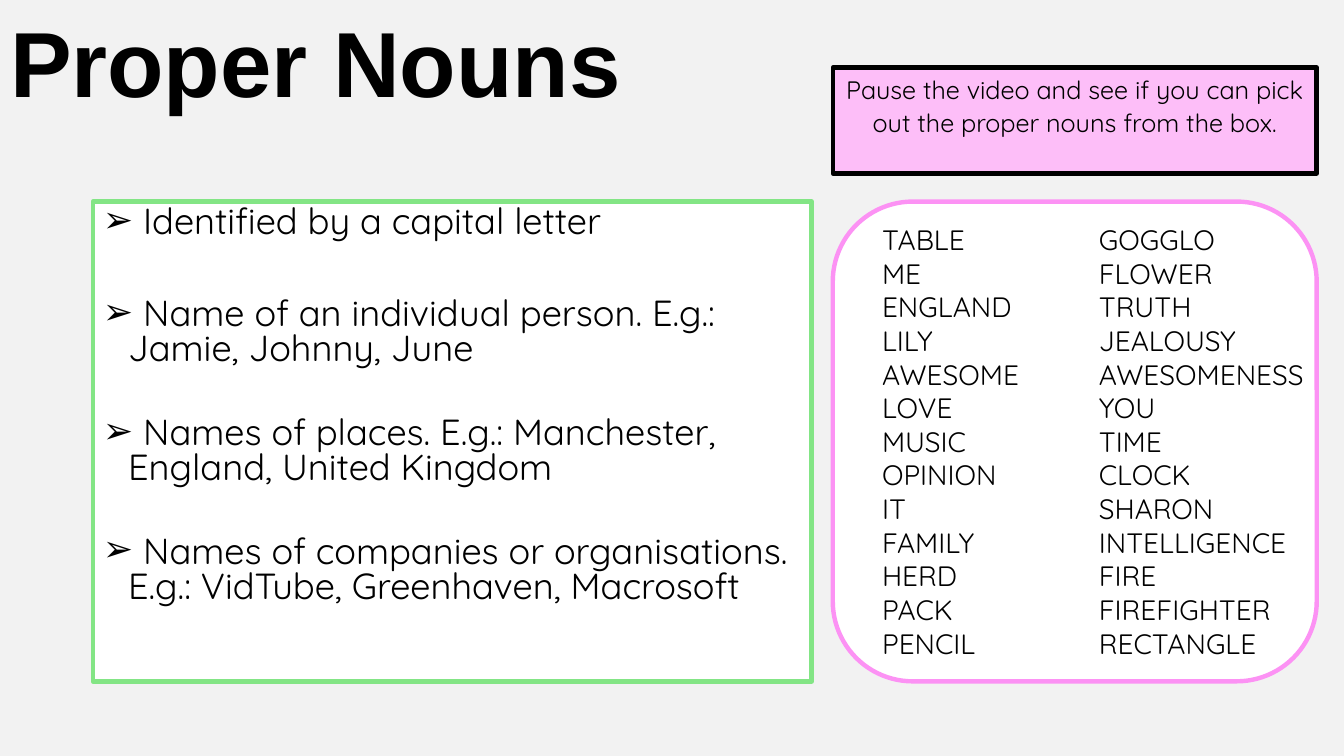
from lxml.etree import SubElement
from pptx import Presentation
from pptx.dml.color import RGBColor
from pptx.enum.shapes import MSO_SHAPE as Shape
from pptx.enum.text import MSO_ANCHOR as Anchor, MSO_AUTO_SIZE as AutoSize, PP_ALIGN as Align
from pptx.oxml.ns import qn
from pptx.util import Inches, Pt

BLACK = RGBColor(0x00, 0x00, 0x00)
WHITE = RGBColor(0xFF, 0xFF, 0xFF)
PAPER = RGBColor(0xF2, 0xF2, 0xF2)
GREEN = RGBColor(0x83, 0xE5, 0x85)
PINK = RGBColor(0xFC, 0x92, 0xF4)
PALE_PINK = RGBColor(0xFD, 0xBE, 0xF8)
BODY_FONT = "Quicksand"

RULES = [
    "Identified by a capital letter",
    "Name of an individual person. E.g.: Jamie, Johnny, June",
    "Names of places. E.g.: Manchester, England, United Kingdom",
    "Names of companies or organisations. E.g.: VidTube, Greenhaven, Macrosoft",
]
WORD_COLUMNS = [
    ["TABLE", "ME", "ENGLAND", "LILY", "AWESOME", "LOVE", "MUSIC", "OPINION",
     "IT", "FAMILY", "HERD", "PACK", "PENCIL"],
    ["GOGGLO", "FLOWER", "TRUTH", "JEALOUSY", "AWESOMENESS", "YOU", "TIME",
     "CLOCK", "SHARON", "INTELLIGENCE", "FIRE", "FIREFIGHTER", "RECTANGLE"],
]


def place(shape, box):
    shape.left, shape.top, shape.width, shape.height = (Inches(v) for v in box)


def outline(shape, fill, line):
    shape.fill.solid()
    shape.fill.fore_color.rgb = fill
    shape.line.color.rgb = line
    shape.line.width = Pt(3.15)


def add_run(paragraph, text, size, font=BODY_FONT, bold=False):
    run = paragraph.add_run()
    run.text = text
    run.font.name = font
    run.font.size = Pt(size)
    run.font.bold = bold
    run.font.color.rgb = BLACK


def paragraphs(frame, count):
    """Yield the first paragraph of the frame, then new ones."""
    for index in range(count):
        yield frame.add_paragraph() if index else frame.paragraphs[0]


def set_bullet(paragraph, char, indent):
    properties = paragraph._p.get_or_add_pPr()
    properties.set("marL", str(Inches(indent)))
    properties.set("indent", str(-Inches(indent)))
    SubElement(properties, qn("a:buFont"), typeface="Arial")
    SubElement(properties, qn("a:buChar"), char=char)


def add_heading(slide, box):
    title = slide.shapes.title
    place(title, box)
    frame = title.text_frame
    frame.auto_size = AutoSize.NONE
    frame.vertical_anchor = Anchor.MIDDLE
    heading = frame.paragraphs[0]
    heading.alignment = Align.LEFT
    heading.line_spacing = 0.9
    add_run(heading, "Proper Nouns", 66, "Arial", True)


def add_rules(slide, box):
    body = slide.placeholders[1]
    place(body, box)
    outline(body, WHITE, GREEN)
    frame = body.text_frame
    frame.auto_size = AutoSize.NONE
    for rule, paragraph in zip(RULES, paragraphs(frame, len(RULES))):
        paragraph.line_spacing = 0.8
        paragraph.space_before = Pt(10)
        paragraph.space_after = Pt(31 if rule == RULES[0] else 25)
        set_bullet(paragraph, "➢", 0.25)
        add_run(paragraph, " " + rule, 25.9)


def add_panel(slide, kind, box, fill, line):
    panel = slide.shapes.add_shape(kind, *(Inches(v) for v in box))
    panel.shadow.inherit = False
    outline(panel, fill, line)
    return panel


def add_word_box(slide, box):
    left, top, width, height = box
    add_panel(slide, Shape.ROUNDED_RECTANGLE, box, WHITE, PINK)
    column_width = 2.15
    for number, words in enumerate(WORD_COLUMNS):
        column = slide.shapes.add_textbox(
            Inches(left + 0.39 + number * column_width), Inches(top + 0.16),
            Inches(column_width + 0.1), Inches(height - 0.32))
        frame = column.text_frame
        frame.word_wrap = True
        for word, paragraph in zip(words, paragraphs(frame, len(words))):
            add_run(paragraph, word, 20)


def add_task(slide, box):
    frame = add_panel(slide, Shape.RECTANGLE, box, PALE_PINK, BLACK).text_frame
    frame.word_wrap = True
    frame.vertical_anchor = Anchor.TOP
    task = frame.paragraphs[0]
    task.alignment = Align.CENTER
    task.line_spacing = 1.07
    task.space_after = Pt(8)
    add_run(task, "Pause the video and see if you can pick out the proper nouns from the box.", 18)


def main():
    deck = Presentation()
    deck.slide_width, deck.slide_height = Inches(13.33), Inches(7.5)
    slide = deck.slides.add_slide(deck.slide_layouts[1])
    slide.background.fill.solid()
    slide.background.fill.fore_color.rgb = PAPER

    # Title and rules on the left
    add_heading(slide, (0, 0, 13.33, 1.34))
    add_rules(slide, (0.92, 2, 7.13, 4.76))

    # Words and task on the right
    add_word_box(slide, (8.26, 2, 4.8, 4.76))
    add_task(slide, (8.26, 0.67, 4.8, 1.05))

    deck.save("out.pptx")


if __name__ == "__main__":
    main()
